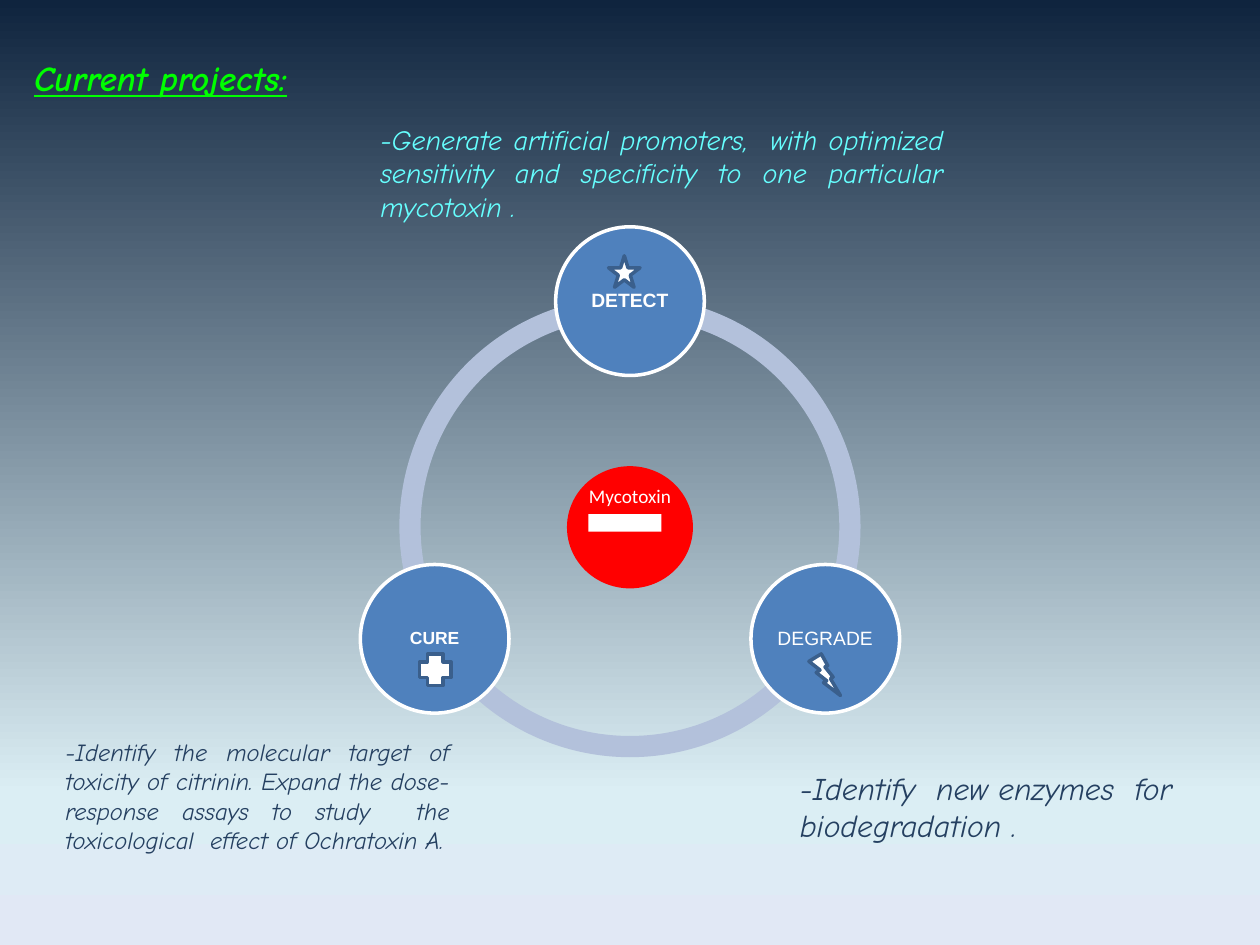
"""Build the slide on current mycotoxin projects: a ring of three tasks with notes."""
from copy import deepcopy
from dataclasses import dataclass
from math import cos, radians, sin

from pptx import Presentation
from pptx import util as u
from pptx.dml.color import RGBColor
from pptx.enum import shapes as es
from pptx.enum import text as et
from pptx.oxml.ns import qn

PX = 9144
KIND = es.MSO_SHAPE
ALIGN = et.PP_ALIGN


@dataclass(frozen=True)
class Theme:
    sky: tuple = ((0, "0F243E"), (0.84, "DBEEF4"), (1, "E1E8F5"))
    title: str = "00FF00"
    aqua: str = "66FFFF"
    navy: str = "254061"
    white: str = "FFFFFF"
    red: str = "FF0000"
    blue: str = "4F81BD"
    edge: str = "3A5F8C"
    ring: str = "B3C1DB"
    hand: str = "Comic Neue"
    sans: str = "Arial"
    plain: str = "Calibri"
    head: int = 20
    large: int = 18
    mid: int = 16
    small: int = 14
    label: int = 11
    tiny: int = 10


T = Theme()


@dataclass(frozen=True)
class Box:
    x: int
    y: int
    w: int
    h: int

    def emu(self) -> list:
        return [u.Emu(n * PX) for n in (self.x, self.y, self.w, self.h)]


@dataclass(frozen=True)
class Font:
    face: str
    size: int
    color: str
    bold: bool = False
    slant: bool = False
    under: bool = False


@dataclass(frozen=True)
class Node:
    word: str
    angle: int
    font: Font


@dataclass(frozen=True)
class Icon:
    kind: KIND
    box: Box


@dataclass(frozen=True)
class Note:
    words: str
    box: Box
    font: Font
    align: ALIGN


MID_X, MID_Y, ORBIT, DISC, RING = 500, 418, 179, 118, 366

NODES = (
    Node("DETECT", -90, Font(T.sans, T.label, T.white, bold=True)),
    Node("DEGRADE", 30, Font(T.sans, T.label, T.white)),
    Node("CURE", 150, Font(T.sans, T.tiny, T.white, bold=True)),
)
ICONS = (
    Icon(KIND.STAR_5_POINT, Box(483, 203, 25, 25)),
    Icon(KIND.LIGHTNING_BOLT, Box(642, 519, 25, 33)),
    Icon(KIND.CROSS, Box(333, 519, 25, 25)),
)
NOTES = (
    Note("-Generate artificial promoters,  with optimized sensitivity and "
         "specificity to one particular mycotoxin .", Box(292, 92, 467, 91),
         Font(T.hand, T.mid, T.aqua, slant=True), ALIGN.JUSTIFY),
    Note("-Identify the molecular target of toxicity of citrinin. Expand the "
         "dose-response assays to study  the toxicological  effect of "
         "Ochratoxin A.", Box(42, 580, 325, 128),
         Font(T.hand, T.small, T.navy, slant=True), ALIGN.JUSTIFY),
    Note("-Identify  new enzymes  for biodegradation .", Box(625, 605, 350, 71),
         Font(T.hand, T.large, T.navy, slant=True), ALIGN.LEFT),
)


def rgb(code: str) -> RGBColor:
    return RGBColor.from_string(code)


def paint(slide) -> None:
    fill = slide.background.fill
    fill.gradient()
    fill.gradient_angle = 270
    stops = slide.element.find(".//" + qn("a:gsLst"))
    stops.append(deepcopy(stops[-1]))
    for stop, (pos, code) in zip(fill.gradient_stops, T.sky):
        stop.position = pos
        stop.color.rgb = rgb(code)


def write(para, words: str, font: Font, align: ALIGN) -> None:
    para.alignment = align
    run = para.add_run()
    run.text = words
    look = run.font
    look.name, look.size = font.face, u.Pt(font.size)
    look.bold, look.italic, look.underline = font.bold, font.slant, font.under
    look.color.rgb = rgb(font.color)


def draw(slide, kind: KIND, box: Box, fill: str, line: str = ""):
    shape = slide.shapes.add_shape(kind, *box.emu())
    shape.shadow.inherit = False
    shape.fill.solid()
    shape.fill.fore_color.rgb = rgb(fill)
    if line:
        shape.line.color.rgb = rgb(line)
        shape.line.width = u.Pt(2)
    else:
        shape.line.fill.background()
    return shape


def label(shape, words: str, font: Font, anchor: et.MSO_ANCHOR) -> None:
    frame = shape.text_frame
    frame.word_wrap = False
    frame.vertical_anchor = anchor
    frame.margin_left = frame.margin_right = u.Emu(2 * PX)
    frame.margin_top = frame.margin_bottom = u.Emu(2 * PX)
    para = frame.paragraphs[0]
    para.line_spacing = 0.9
    write(para, words, font, ALIGN.CENTER)


def head(slide) -> None:
    title = slide.shapes.title
    title.left, title.top, title.width, title.height = Box(17, 40, 267, 44).emu()
    frame = title.text_frame
    frame.auto_size = et.MSO_AUTO_SIZE.NONE
    frame.word_wrap = True
    frame.vertical_anchor = et.MSO_ANCHOR.TOP
    font = Font(T.hand, T.head, T.title, bold=True, slant=True, under=True)
    write(frame.paragraphs[0], "Current projects:", font, ALIGN.LEFT)


def arc(slide, start: int) -> None:
    box = Box(MID_X - RING // 2, MID_Y - RING // 2, RING, RING)
    shape = draw(slide, KIND.BLOCK_ARC, box, T.ring)
    ends = {90: (90, 162), 18: (18, 90), 162: (162, 18)}[start]
    for i, deg in enumerate(ends):
        shape.adjustments[i] = deg * 0.6
    shape.adjustments[2] = 0.046


def disc(slide, node: Node) -> None:
    turn = radians(node.angle)
    x = round(MID_X + ORBIT * cos(turn) - DISC / 2)
    y = round(MID_Y + ORBIT * sin(turn) - DISC / 2)
    shape = draw(slide, KIND.OVAL, Box(x, y, DISC, DISC), T.blue, T.white)
    label(shape, node.word, node.font, et.MSO_ANCHOR.MIDDLE)


def jot(slide, note: Note) -> None:
    frame = slide.shapes.add_textbox(*note.box.emu()).text_frame
    frame.word_wrap = True
    write(frame.paragraphs[0], note.words, note.font, note.align)


def main() -> None:
    deck = Presentation()
    deck.slide_width, deck.slide_height = u.Inches(10), u.Inches(7.5)
    slide = deck.slides.add_slide(deck.slide_layouts[5])
    paint(slide)
    head(slide)
    for start in (90, 18, 162):
        arc(slide, start)
    core = draw(slide, KIND.OVAL, Box(450, 370, 100, 97), T.red)
    label(core, "Mycotoxin", Font(T.plain, T.label, T.white), et.MSO_ANCHOR.TOP)
    for node in NODES:
        disc(slide, node)
    draw(slide, KIND.RECTANGLE, Box(467, 408, 58, 14), T.white)
    for icon in ICONS:
        draw(slide, icon.kind, icon.box, T.white, T.edge)
    for note in NOTES:
        jot(slide, note)
    deck.save("out.pptx")


if __name__ == "__main__":
    main()
